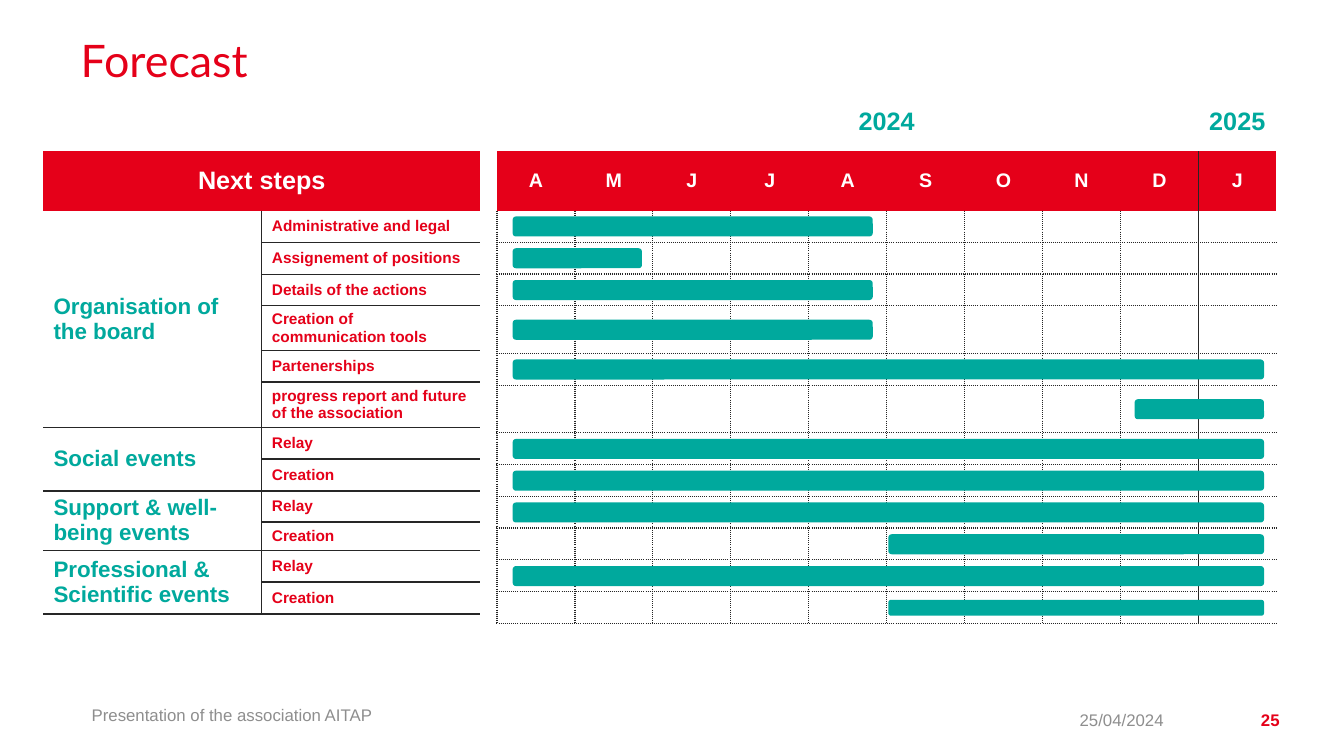
import itertools
import pptx
import pptx.util
import pptx.dml.color
import pptx.enum.shapes
import pptx.enum.text
import pptx.oxml.ns
from lxml import etree

Pt = pptx.util.Pt
ALIGN = pptx.enum.text.PP_ALIGN
ANCHOR = pptx.enum.text.MSO_ANCHOR
COLORS = {"red": "E50019", "teal": "00A99D", "white": "FFFFFF",
          "ink": "262626", "gray": "8E8E8E"}
WIDE, HIGH = pptx.util.Inches(13.33), pptx.util.Inches(7.5)
LINE = Pt(22.7)  # height of a one-line table row
HEAD = 1.87      # header height, in rows
MONTHS = "AMJJASONDJ"
YEAR_END = 9     # first month column of 2025

# Bar starts and ends, in months from the first column
SUMMER, SPRING, WHOLE = (0.2, 4.82), (0.2, 1.86), (0.2, 9.84)
AUTUMN, WINTER = (5.02, 9.84), (8.18, 9.84)

# Group: tasks as (label, height in the step list, height in the calendar, bar)
STEPS = {
    "Organisation of the board": [
        ("Administrative and legal", 1, 1, SUMMER),
        ("Assignement of positions", 1, 1, SPRING),
        ("Details of the actions", 1, 1, SUMMER),
        ("Creation of communication tools", 1.39, 1.5, SUMMER),
        ("Partenerships", 1, 1, WHOLE),
        ("progress report and future of the association", 1.42, 1.5, WINTER)],
    "Social events": [("Relay", 1, 1, WHOLE), ("Creation", 1, 1, WHOLE)],
    "Support & well-being events": [
        ("Relay", 1, 1, WHOLE), ("Creation", 0.88, 1, AUTUMN)],
    "Professional & Scientific events": [
        ("Relay", 1, 1, WHOLE), ("Creation", 1, 1, AUTUMN)],
}
TASKS = list(itertools.chain.from_iterable(STEPS.values()))


def share(x, y, w, h):
    """Turn percentages of the slide into a box."""
    return [int(part * size / 100)
            for part, size in zip((x, y, w, h), (WIDE, HIGH) * 2)]


def rgb(name):
    return pptx.dml.color.RGBColor.from_string(COLORS[name])


def write(frame, text, size, color, bold=False, align=ALIGN.LEFT, face="Arial"):
    par = frame.paragraphs[0]
    par.text = text
    par.alignment = align
    font = par.font
    font.name, font.size, font.bold = face, Pt(size), bold
    font.color.rgb = rgb(color)


def style(cell, fill=None, **edges):
    """Draw the edges given as (width, dash) under L, R, T, B; clear the rest."""
    props = cell._tc.get_or_add_tcPr()
    qn = pptx.oxml.ns.qn
    for side in "LRTB":
        line = etree.SubElement(props, qn("a:ln" + side))
        if not edges.get(side):
            etree.SubElement(line, qn("a:noFill"))
            continue
        width, dash = edges[side]
        line.set("w", str(Pt(width)))
        paint = etree.SubElement(line, qn("a:solidFill"))
        etree.SubElement(paint, qn("a:srgbClr"), val=COLORS["ink"])
        etree.SubElement(line, qn("a:prstDash"), val=dash)
    if fill:
        cell.fill.solid()
        cell.fill.fore_color.rgb = rgb(fill)
    else:
        cell.fill.background()
    cell.vertical_anchor = ANCHOR.MIDDLE


def grid(slide, left, top, width, rows, cols):
    """Add a plain table with row heights given in lines."""
    table = slide.shapes.add_table(len(rows), cols, left, top, width,
                                   int(sum(rows) * LINE)).table
    table.first_row = table.horz_banding = False
    for row, height in zip(table.rows, rows):
        row.height = int(height * LINE)
    for col in table.columns:
        col.width = width // cols
    return table


def list_steps(slide, left, top, width):
    table = grid(slide, left, top, width, [HEAD] + [t[1] for t in TASKS], 2)
    thin, thick = (1, "solid"), (1.5, "solid")
    head = table.cell(0, 0)
    head.merge(table.cell(0, 1))
    for col in range(2):
        style(table.cell(0, col), "red")
    write(head.text_frame, "Next steps", 18, "white", True, ALIGN.CENTER)

    first, above = 1, None
    for index, (group, tasks) in enumerate(STEPS.items()):
        rule = thick if index else thin
        last = first + len(tasks) - 1
        name = table.cell(first, 0)
        name.merge(table.cell(last, 0))
        write(name.text_frame, group, 16, "teal", True)
        for row, task in enumerate(tasks, first):
            style(table.cell(row, 0), R=thin, T=above if row == first else None,
                  B=rule if row in (first, last) else None)
            cell = table.cell(row, 1)
            style(cell, L=thin, T=above if row == first else rule, B=rule)
            write(cell.text_frame, task[0], 11, "red", True)
        first, above = last + 1, rule


def draw_calendar(slide, left, top, width):
    rows = [HEAD, HEAD] + [t[2] for t in TASKS]
    count = len(MONTHS)
    table = grid(slide, left, top, width, rows, count)
    solid, dots = (1, "solid"), (1, "sysDot")
    table.cell(0, 1).merge(table.cell(0, YEAR_END - 1))
    for col, month in enumerate(MONTHS):
        style(table.cell(0, col))
        first = solid if col == YEAR_END else None
        last = solid if col == YEAR_END - 1 else None
        head = table.cell(1, col)
        style(head, "red", L=first, R=last)
        write(head.text_frame, month, 14, "white", True, ALIGN.CENTER)
        for row in range(2, len(rows)):
            cell = table.cell(row, col)
            style(cell, L=first or dots,
                  R=last or (dots if col < count - 1 else None),
                  T=dots if row > 2 else None, B=dots)
            cell.margin_top = cell.margin_bottom = 0
            cell.text_frame.paragraphs[0].font.size = Pt(11)
    for col, year in ((1, "2024"), (YEAR_END, "2025")):
        write(table.cell(0, col).text_frame, year, 18, "teal", True, ALIGN.CENTER)
    draw_bars(slide, left, top + int(2 * HEAD * LINE), width / count)


def draw_bars(slide, left, top, month):
    for index, (label, _, height, (start, end)) in enumerate(TASKS):
        thick = 0.5 if index == len(TASKS) - 1 else 0.63
        bar = slide.shapes.add_shape(
            pptx.enum.shapes.MSO_SHAPE.ROUNDED_RECTANGLE,
            int(left + start * month), int(top + (height - thick) / 2 * LINE),
            int((end - start) * month), int(thick * LINE))
        bar.shadow.inherit = False
        bar.fill.solid()
        bar.fill.fore_color.rgb = rgb("teal")
        bar.line.fill.background()
        top += int(height * LINE)


def set_title(slide, box):
    title = slide.shapes.title
    title.left, title.top, title.width, title.height = box
    frame = title.text_frame
    frame.auto_size = pptx.enum.text.MSO_AUTO_SIZE.NONE
    frame.vertical_anchor = ANCHOR.TOP
    frame.margin_left = frame.margin_right = 0
    write(frame, "Forecast", 32, "red", face="Lato")
    frame.paragraphs[0].line_spacing = 0.9


def add_note(slide, box, text, color, bold, align, anchor):
    frame = slide.shapes.add_textbox(*box).text_frame
    frame.word_wrap = True
    frame.vertical_anchor = anchor
    write(frame, text, 12, color, bold, align)


def add_footer(slide, top, high):
    for left, width, *note in (
            (6.08, 72.5, "Presentation of the association AITAP", "gray",
             False, ALIGN.LEFT, ANCHOR.TOP),
            (79, 8.33, "25/04/2024", "gray", False, ALIGN.RIGHT, ANCHOR.MIDDLE),
            (90.25, 5.7, "25", "red", True, ALIGN.RIGHT, ANCHOR.MIDDLE)):
        add_note(slide, share(left, top, width, high), *note)


def main():
    deck = pptx.Presentation()
    deck.slide_width, deck.slide_height = WIDE, HIGH
    slide = deck.slides.add_slide(deck.slide_layouts[5])
    set_title(slide, share(6, 4.5, 88, 12.7))
    draw_calendar(slide, *share(36.98, 12.13, 58, 0)[:3])
    list_steps(slide, *share(3.23, 20, 32.5, 0)[:3])
    add_footer(slide, 92.5, 5.33)
    deck.save("out.pptx")


if __name__ == "__main__":
    main()
